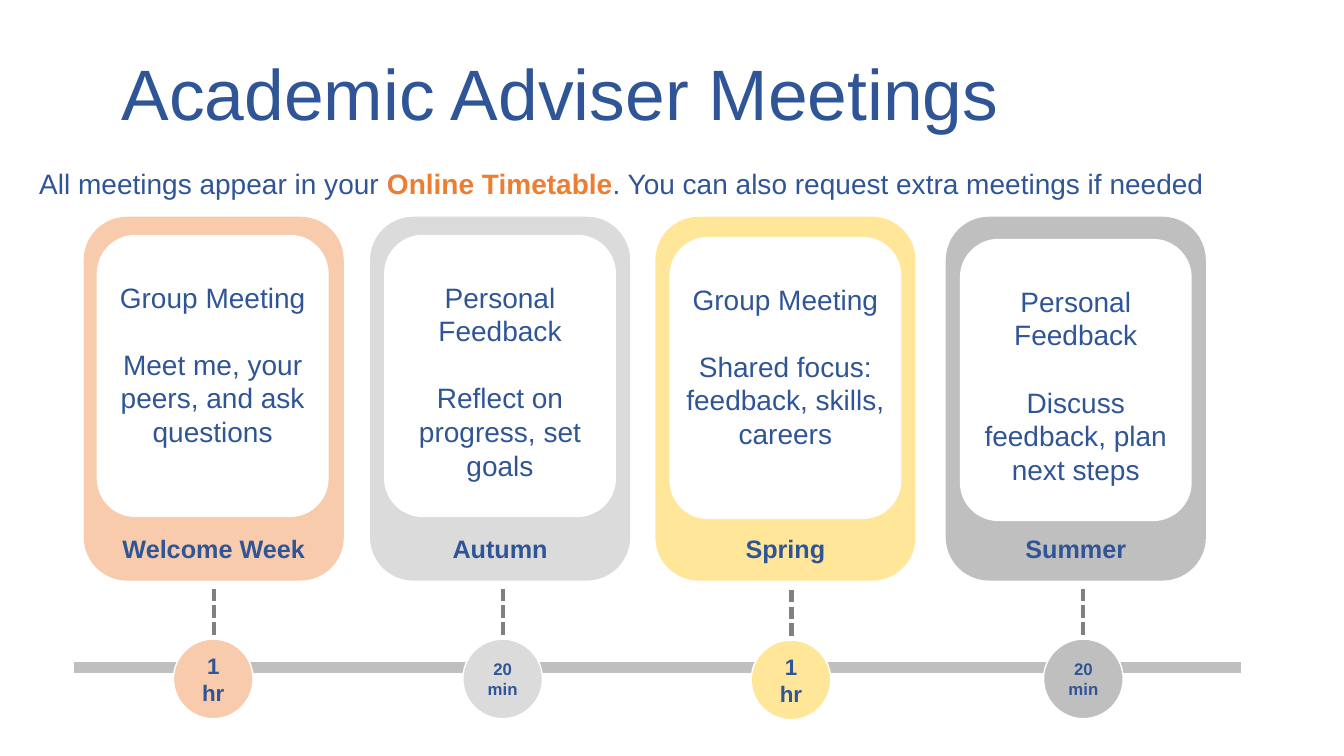
from lxml import etree
from pptx import Presentation
from pptx import util as u
from pptx.dml.color import RGBColor
from pptx.enum import dml, shapes, text
from pptx.oxml.ns import qn

PX = 9144  # 100 px to the inch
COLORS = {
    "navy": "2F5597", "orange": "ED7D31", "white": "FFFFFF", "dash": "808080",
    "peach": "F8CBAD", "silver": "DBDBDB", "yellow": "FFE699", "grey": "BFBFBF",
}
FONT = "Arial"
TITLE = "Academic Adviser Meetings"
INTRO = [
    ("All meetings appear in your ", "navy", False),
    ("Online Timetable", "orange", True),
    (". You can also request extra meetings if needed", "navy", False),
]
CARD_TOP, CARD_WIDTH, CARD_HEIGHT = 215, 258, 361
PANEL_WIDTH, PANEL_HEIGHT = 230, 280
CIRCLE = 79
# card left, panel left and top, dash x and top, circle left and top
MEETINGS = [
    {"term": "Welcome Week", "color": "peach", "kind": "Group Meeting",
     "focus": "Meet me, your peers, and ask questions", "time": "1 hr", "time_size": 16,
     "card": 83, "panel": (96, 233), "dash": (212, 584), "circle": (172, 634)},
    {"term": "Autumn", "color": "silver", "kind": "Personal Feedback",
     "focus": "Reflect on progress, set goals", "time": "20 min", "time_size": 12,
     "card": 367, "panel": (381, 233), "dash": (499, 584), "circle": (459, 634)},
    {"term": "Spring", "color": "yellow", "kind": "Group Meeting",
     "focus": "Shared focus: feedback, skills, careers", "time": "1 hr", "time_size": 16,
     "card": 650, "panel": (664, 235), "dash": (785, 585), "circle": (745, 635)},
    {"term": "Summer", "color": "grey", "kind": "Personal Feedback",
     "focus": "Discuss feedback, plan next steps", "time": "20 min", "time_size": 12,
     "card": 938, "panel": (952, 237), "dash": (1074, 584), "circle": (1035, 634)},
]


def px(*lengths):
    return [u.Emu(length * PX) for length in lengths]


def rgb(name):
    return RGBColor.from_string(COLORS[name])


def add_run(paragraph, words, size, color="navy", bold=False):
    run = paragraph.add_run()
    run.text = words
    run.font.name, run.font.size, run.font.bold = FONT, u.Pt(size), bold
    run.font.color.rgb = rgb(color)


def add_text(slide, box, paragraphs, size, bold=False, gap=0):
    """Add a centred text box, with gap points between its paragraphs."""
    frame = slide.shapes.add_textbox(*px(*box)).text_frame
    frame.word_wrap = True
    for index, words in enumerate(paragraphs):
        paragraph = frame.add_paragraph() if index else frame.paragraphs[0]
        paragraph.alignment = text.PP_ALIGN.CENTER
        if index:
            paragraph.space_before = u.Pt(gap)
        add_run(paragraph, words, size, bold=bold)
    return frame


def add_shape(slide, kind, box, color, outline=None):
    shape = slide.shapes.add_shape(kind, *px(*box))
    shape.shadow.inherit = False
    shape.fill.solid()
    shape.fill.fore_color.rgb = rgb(color)
    if outline:
        shape.line.color.rgb = rgb(outline)
        shape.line.width = u.Pt(1)
    else:
        shape.line.fill.background()
    return shape


def add_line(slide, ends, color, width, dash=None):
    line = slide.shapes.add_connector(shapes.MSO_CONNECTOR.STRAIGHT, *px(*ends))
    line.line.color.rgb = rgb(color)
    line.line.width = u.Pt(width)
    if dash:
        line.line.dash_style = dash
    etree.SubElement(line._element.spPr, qn("a:effectLst"))


def add_card(slide, meeting):
    rounded = shapes.MSO_SHAPE.ROUNDED_RECTANGLE
    left = meeting["card"]
    add_shape(slide, rounded, (left, CARD_TOP, CARD_WIDTH, CARD_HEIGHT), meeting["color"])
    add_text(slide, (left - 5, 524, CARD_WIDTH + 10, 42), [meeting["term"]], 18, bold=True)
    left, top = meeting["panel"]
    add_shape(slide, rounded, (left, top, PANEL_WIDTH, PANEL_HEIGHT), "white")
    add_text(slide, (left, top + 40, PANEL_WIDTH, 200),
             [meeting["kind"], meeting["focus"]], 20, gap=24)


def add_time_marker(slide, meeting):
    x, top = meeting["dash"]
    add_line(slide, (x, top, x, top + 63), "dash", 3, dml.MSO_LINE.SQUARE_DOT)
    circle = add_shape(slide, shapes.MSO_SHAPE.OVAL, (*meeting["circle"], CIRCLE, CIRCLE),
                       meeting["color"], outline="white")
    frame = circle.text_frame
    frame.word_wrap = True
    frame.vertical_anchor = text.MSO_ANCHOR.MIDDLE
    paragraph = frame.paragraphs[0]
    paragraph.alignment = text.PP_ALIGN.CENTER
    add_run(paragraph, meeting["time"], meeting["time_size"], bold=True)


def main():
    presentation = Presentation()
    presentation.slide_width, presentation.slide_height = px(1333, 750)
    slide = presentation.slides.add_slide(presentation.slide_layouts[6])

    title = add_text(slide, (73, 65, 965, 71), [TITLE], 51)
    title.vertical_anchor = text.MSO_ANCHOR.BOTTOM
    title.paragraphs[0].line_spacing = 0.7

    intro = add_text(slide, (29, 160, 1194, 44), [], 20)
    for words, color, bold in INTRO:
        add_run(intro.paragraphs[0], words, 20, color, bold)

    add_line(slide, (73, 662, 1231, 662), "grey", 8)
    for meeting in MEETINGS:
        add_card(slide, meeting)
        add_time_marker(slide, meeting)

    presentation.save("out.pptx")


if __name__ == "__main__":
    main()
